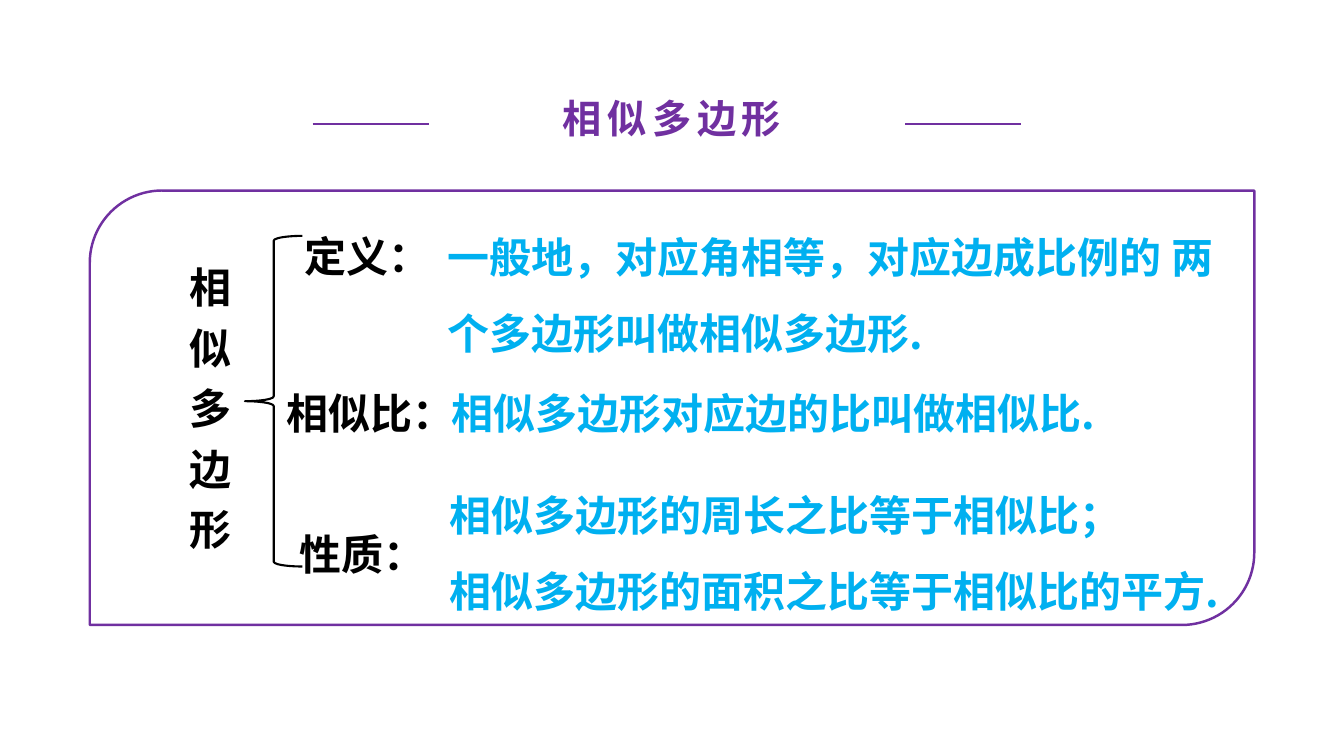
from lxml import etree
from pptx import Presentation
from pptx import util as u
from pptx.dml.color import RGBColor
from pptx.enum import shapes, text
from pptx.oxml.ns import qn

PURPLE = RGBColor(0x70, 0x30, 0xA0)
BLUE = RGBColor(0x00, 0xB0, 0xF0)
BLACK = RGBColor(0x00, 0x00, 0x00)
PX = 9144  # 100 px to the inch


def px(*lengths):
    return [u.Emu(length * PX) for length in lengths]


class SlideBuilder:
    font = "Noto Sans CJK SC"

    def __init__(self, page):
        self.page = page

    def shape(self, kind, place, color, weight):
        """Unfilled preset shape with an outline."""
        shape = self.page.shapes.add_shape(kind, *px(*place))
        shape.shadow.inherit = False
        shape.fill.background()
        shape.line.color.rgb = color
        shape.line.width = u.Pt(weight)

    def rule(self, left, right, y, color):
        """Thin horizontal line."""
        line = self.page.shapes.add_connector(
            shapes.MSO_CONNECTOR.STRAIGHT, *px(left, y, right, y))
        line.line.color.rgb = color
        line.line.width = u.Pt(1)
        etree.SubElement(line._element.spPr, qn("a:effectLst"))

    def text(self, words, place, color=BLACK, size=30, leading=1.2, wrap=True,
             align=None, anchor=text.MSO_ANCHOR.TOP, insets=(10, 5),
             tracking=None, grow=True):
        """Bold text box, one paragraph for each line of words."""
        box = self.page.shapes.add_textbox(*px(*place))
        frame = box.text_frame
        frame.word_wrap = wrap
        frame.auto_size = (text.MSO_AUTO_SIZE.SHAPE_TO_FIT_TEXT if grow
                           else text.MSO_AUTO_SIZE.NONE)
        frame.vertical_anchor = anchor
        frame.margin_left = frame.margin_right = px(insets[0])[0]
        frame.margin_top = frame.margin_bottom = px(insets[1])[0]
        frame.text = words
        for para in frame.paragraphs:
            para.line_spacing = leading
            para.alignment = align
            for span in para.runs:
                span.font.size = u.Pt(size)
                span.font.bold = True
                span.font.color.rgb = color
                span.font.name = self.font
                props = span.font._element
                etree.SubElement(props, qn("a:ea"), typeface=self.font)
                if tracking:
                    props.set("spc", str(tracking * 100))


def main():
    deck = Presentation()
    deck.slide_width, deck.slide_height = px(1333, 750)
    slide = SlideBuilder(deck.slides.add_slide(deck.slide_layouts[6]))

    # Frame and title between two rules
    slide.shape(shapes.MSO_SHAPE.ROUND_2_DIAG_RECTANGLE,
                (89, 189, 1155, 431), PURPLE, 1.75)
    slide.text("相似多边形", (404, 85, 525, 63), color=PURPLE, size=28,
               leading=1.0, align=text.PP_ALIGN.CENTER,
               anchor=text.MSO_ANCHOR.MIDDLE, insets=(13, 7),
               tracking=4, grow=False)
    for left in (310, 898):
        slide.rule(left, left + 115, 123, PURPLE)

    # Topic, one character a line, and its brace
    slide.text("相似多边形", (178, 245, 55, 305))
    slide.shape(shapes.MSO_SHAPE.LEFT_BRACE, (243, 234, 57, 328), BLACK, 1.5)

    # Branch labels
    for label, place in (("定义：", (292, 214, 147, 63)),
                         ("相似比：", (274, 370, 189, 63)),
                         ("性质：", (287, 509, 147, 63))):
        slide.text(label, place, wrap=False)

    # Explanations
    for words, place, leading in (
            ("一般地，对应角相等，对应边成比例的 两个多边形叫做相似多边形.",
             (434, 200, 791, 162), 1.5),
            ("相似多边形对应边的比叫做相似比.", (438, 370, 772, 71), 1.2),
            ("相似多边形的周长之比等于相似比；\n相似多边形的面积之比等于相似比的平方.",
             (436, 456, 798, 162), 1.5)):
        slide.text(words, place, color=BLUE, leading=leading)

    deck.save("out.pptx")


if __name__ == "__main__":
    main()
